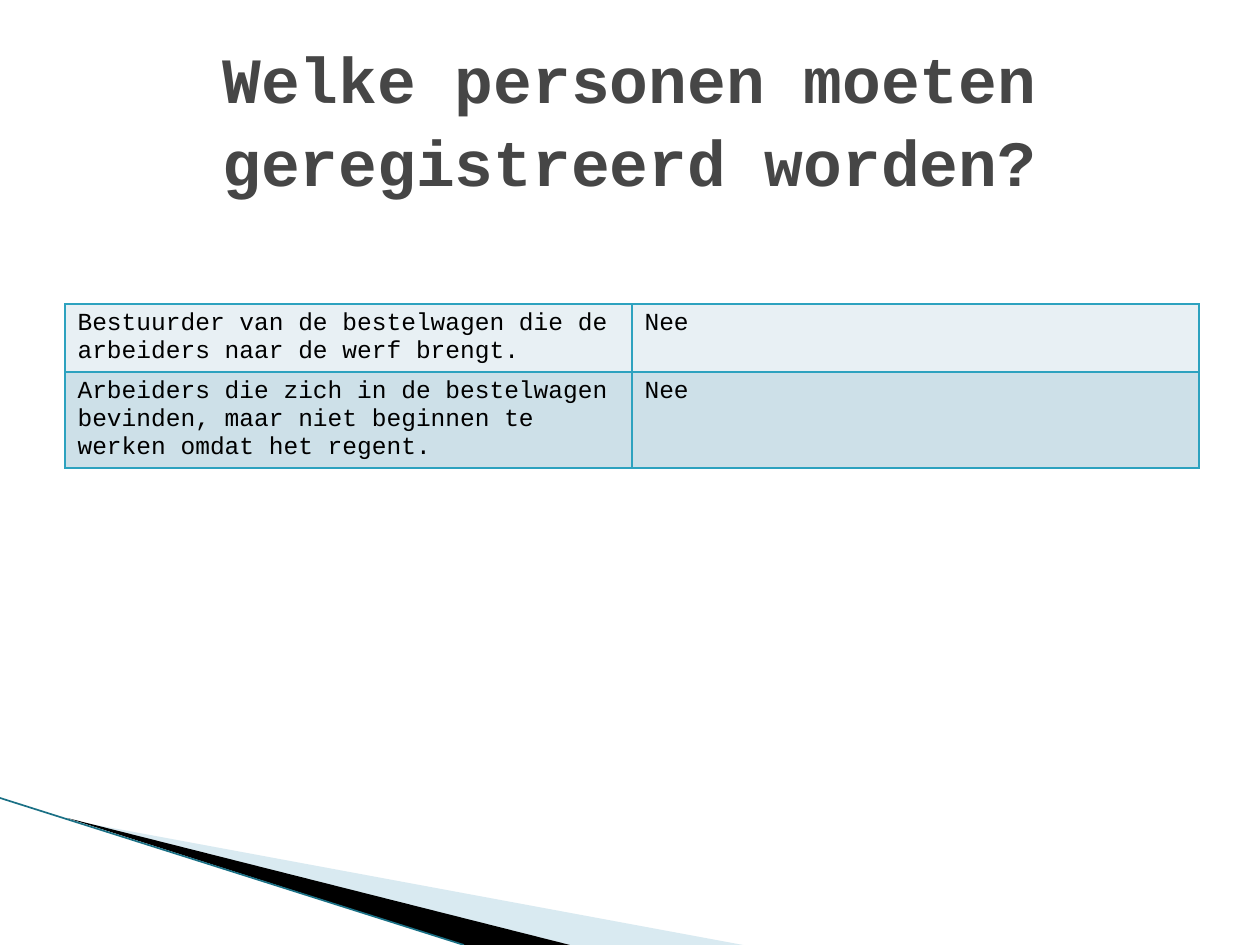
from dataclasses import dataclass

from lxml import etree
from pptx import Presentation
from pptx.dml.color import RGBColor
from pptx.enum.shapes import MSO_CONNECTOR
from pptx.enum.text import MSO_ANCHOR, MSO_AUTO_SIZE, PP_ALIGN
from pptx.oxml.ns import qn
from pptx.util import Inches, Pt

STRAIGHT = MSO_CONNECTOR.STRAIGHT
MIDDLE = MSO_ANCHOR.MIDDLE
NO_FIT = MSO_AUTO_SIZE.NONE
CENTER = PP_ALIGN.CENTER

PX = Inches(1) / 126
COLORS = {
    "title": "464646",
    "text": "000000",
    "border": "2DA2BF",
    "row_light": "E8F0F4",
    "row_dark": "CDE0E8",
    "wedge_blue": "A0CBDC",
    "wedge_black": "000000",
    "edge": "1A7085",
}
TITLE_FONT = {"name": "Courier New", "size": Pt(36.9), "bold": True}
CELL_FONT = {"name": "Courier New", "size": Pt(14), "bold": False}


@dataclass
class Wedge:
    points: list[tuple[int, int]]
    color: str
    opacity: int


@dataclass
class Row:
    person: str
    answer: str
    height: int
    color: str


WEDGES = [
    Wedge([(69, 820), (743, 945), (570, 945)], "wedge_blue", 40),
    Wedge([(67, 818), (570, 945), (464, 945)], "wedge_black", 100),
]
ROWS = [
    Row("Bestuurder van de bestelwagen die de arbeiders naar de werf brengt.",
        "Nee", 68, "row_light"),
    Row("Arbeiders die zich in de bestelwagen bevinden, maar niet beginnen te "
        "werken omdat het regent.", "Nee", 96, "row_dark"),
]


def emu(px: int) -> int:
    return round(px * PX)


def rgb(name: str) -> RGBColor:
    return RGBColor.from_string(COLORS[name])


def format_font(font, values: dict, color: str) -> None:
    for key, value in values.items():
        setattr(font, key, value)
    font.color.rgb = rgb(color)


def draw_wedge(page, wedge: Wedge) -> None:
    builder = page.shapes.build_freeform(*wedge.points[0], scale=PX)
    builder.add_line_segments(wedge.points[1:], close=True)
    shape = builder.convert_to_shape()
    shape.shadow.inherit = False
    shape.line.fill.background()
    shape.fill.solid()
    shape.fill.fore_color.rgb = rgb(wedge.color)
    if wedge.opacity < 100:
        color = shape._element.spPr.find(".//" + qn("a:srgbClr"))
        etree.SubElement(color, qn("a:alpha"), val=str(wedge.opacity * 1000))


def draw_edge(page) -> None:
    edge = page.shapes.add_connector(STRAIGHT, emu(0), emu(798), emu(464), emu(945))
    edge.line.color.rgb = rgb("edge")
    edge.line.width = Pt(0.95)
    etree.SubElement(edge._element.spPr, qn("a:effectLst"))


def add_borders(cell) -> None:
    properties = cell._tc.get_or_add_tcPr()
    for index, side in enumerate(("lnL", "lnR", "lnT", "lnB")):
        line = etree.Element(qn(f"a:{side}"), w=str(Pt(1)))
        fill = etree.SubElement(line, qn("a:solidFill"))
        etree.SubElement(fill, qn("a:srgbClr"), val=COLORS["border"])
        properties.insert(index, line)


def draw_table(page, rows: list[Row]) -> None:
    height = sum(row.height for row in rows)
    frame = page.shapes.add_table(len(rows), 2, emu(65), emu(304), emu(1134), emu(height))
    table = frame.table
    table.first_row = False
    table.horz_banding = False
    for index, row in enumerate(rows):
        table.rows[index].height = emu(row.height)
        for column, text in enumerate((row.person, row.answer)):
            cell = table.cell(index, column)
            cell.text = text
            format_font(cell.text_frame.paragraphs[0].runs[0].font, CELL_FONT, "text")
            cell.fill.solid()
            cell.fill.fore_color.rgb = rgb(row.color)
            add_borders(cell)


def draw_title(page, text: str) -> None:
    title = page.shapes.title
    title.left, title.top, title.width, title.height = map(emu, (63, 38, 1134, 157))
    frame = title.text_frame
    frame.word_wrap = True
    frame.auto_size = NO_FIT
    frame.vertical_anchor = MIDDLE
    para = frame.paragraphs[0]
    para.alignment = CENTER
    para.line_spacing = 1.07
    span = para.add_run()
    span.text = text
    format_font(span.font, TITLE_FONT, "title")


def main() -> None:
    deck = Presentation()
    deck.slide_width, deck.slide_height = emu(1260), emu(945)
    page = deck.slides.add_slide(deck.slide_layouts[5])
    for wedge in WEDGES:
        draw_wedge(page, wedge)
    draw_edge(page)
    draw_table(page, ROWS)
    draw_title(page, "Welke personen moeten geregistreerd worden?")
    deck.save("out.pptx")


if __name__ == "__main__":
    main()
